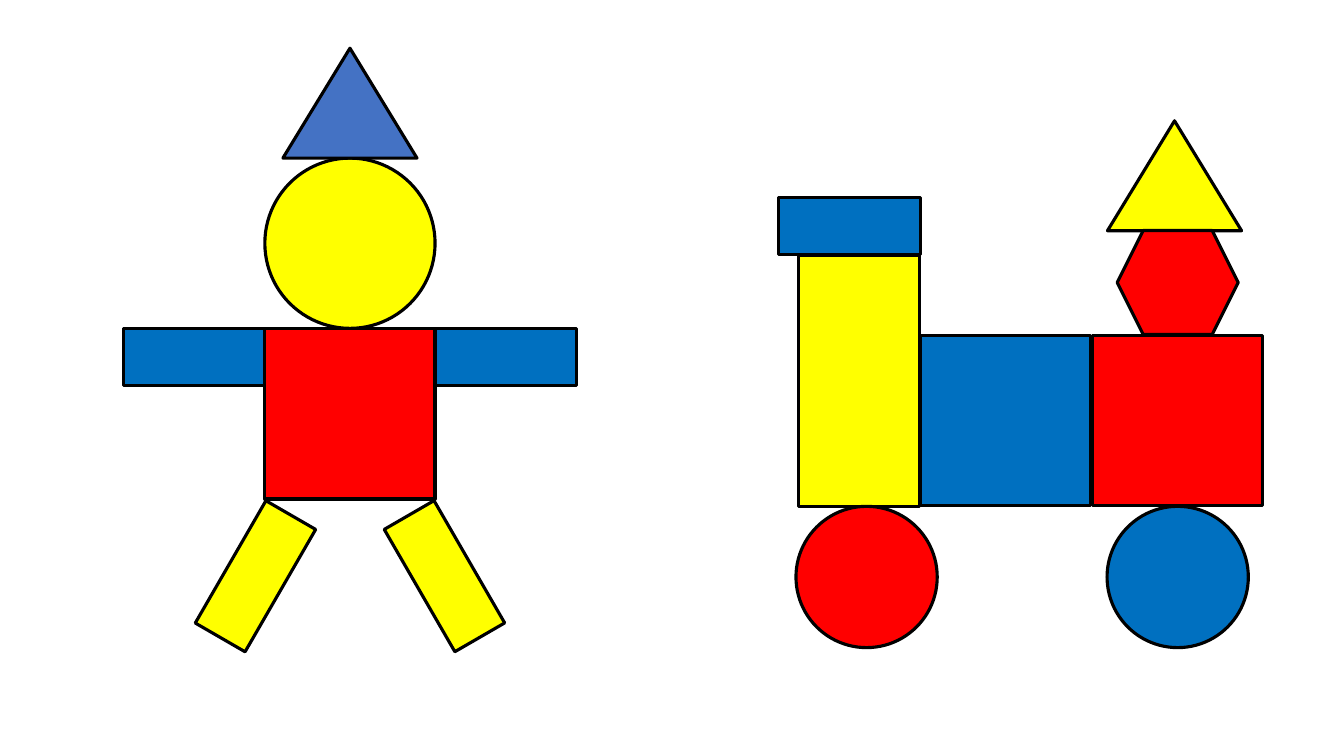
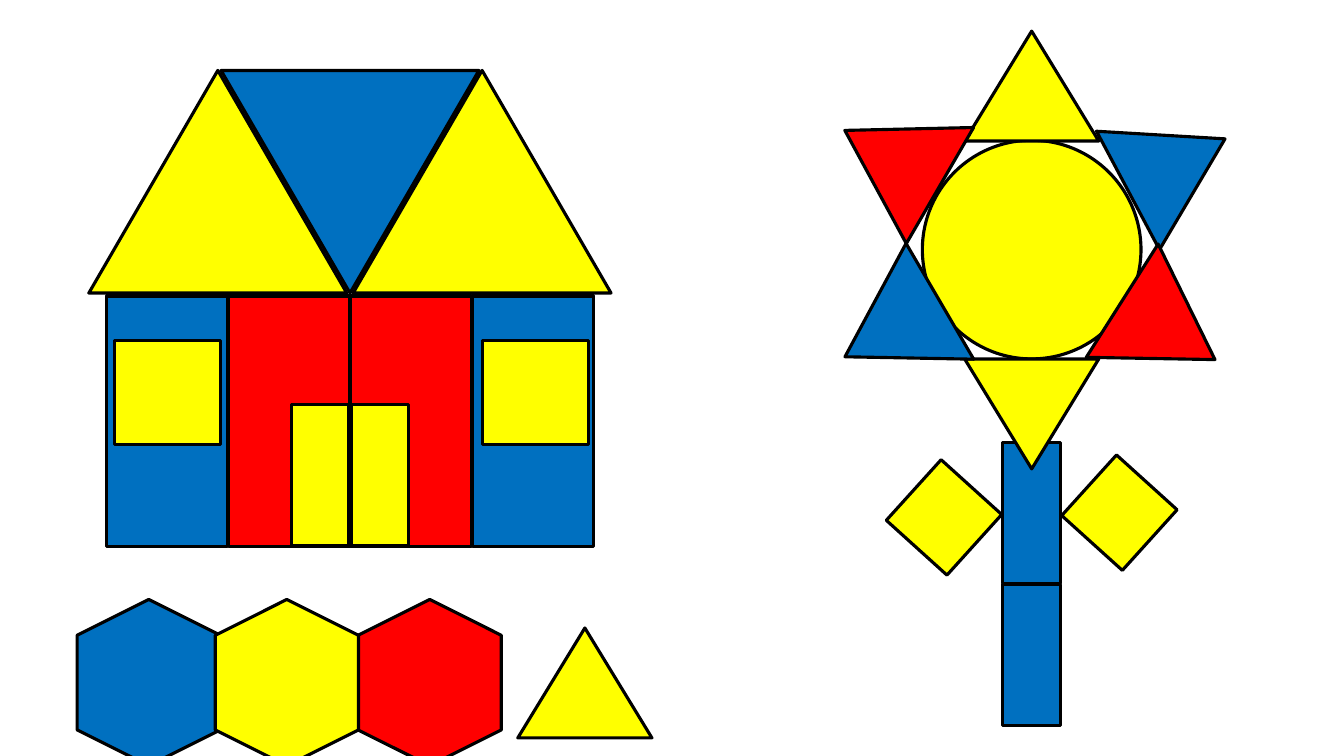
from pptx import Presentation
from pptx.dml.color import RGBColor
from pptx.enum.shapes import MSO_SHAPE as Shape
from pptx.util import Cm, Pt

COLOURS = {
    "red": "FF0000",
    "yellow": "FFFF00",
    "blue": "0070C0",
    "steel": "4472C4",
    "outline": "000000",
}

# Block sizes in cm: width, height
STRIP = (3.56, 1.45)
SLAB = (3.05, 6.32)
SQUARE = (4.29, 4.29)
WHEEL = (3.56, 3.56)
TRIANGLE = (3.38, 2.77)
ROOF = (6.5, 5.61)
WINDOW = (2.67, 2.62)
LEAF = (2.06, 2.06)
DISC = (5.51, 5.51)
SMALL_HEXAGON = (3.05, 2.62)
LARGE_HEXAGON = (4.19, 3.61)


def rgb(name):
    return RGBColor.from_string(COLOURS[name])


def add_block(shapes, kind, colour, centre, size, turn=0):
    """Place an outlined block by its centre, turned clockwise in degrees."""
    (x, y), (width, height) = centre, size
    block = shapes.add_shape(kind, Cm(x - width / 2), Cm(y - height / 2),
                             Cm(width), Cm(height))
    block.rotation = turn
    block.shadow.inherit = False
    block.fill.solid()
    block.fill.fore_color.rgb = rgb(colour)
    block.line.color.rgb = rgb("outline")
    block.line.width = Pt(2.25)


def add_group(slide):
    return slide.shapes.add_group_shape().shapes


def draw_person(slide):
    person = add_group(slide)
    middle = 8.82
    add_block(person, Shape.OVAL, "yellow", (middle, 6.13), SQUARE)
    add_block(person, Shape.ISOSCELES_TRIANGLE, "steel", (middle, 2.6), TRIANGLE)
    add_block(person, Shape.RECTANGLE, "red", (middle, 10.43), SQUARE)
    # Arms and legs mirror each other
    for side in (1, -1):
        add_block(person, Shape.RECTANGLE, "blue", (middle + side * 3.93, 9), STRIP)
        add_block(person, Shape.RECTANGLE, "yellow",
                  (middle + side * 2.38, 14.52), STRIP, side * 60)


def draw_train(slide):
    train = add_group(slide)
    cab = 29.68
    # Engine
    add_block(train, Shape.RECTANGLE, "red", (cab, 10.6), SQUARE)
    add_block(train, Shape.RECTANGLE, "blue", (21.41, 5.7), STRIP)
    add_block(train, Shape.RECTANGLE, "yellow", (21.65, 9.6), SLAB)
    add_block(train, Shape.RECTANGLE, "blue", (25.34, 10.6), SQUARE)
    # Cab roof
    add_block(train, Shape.ISOSCELES_TRIANGLE, "yellow", (29.6, 4.43), TRIANGLE)
    add_block(train, Shape.HEXAGON, "red", (cab, 7.12), SMALL_HEXAGON)
    # Wheels
    for colour, x in (("red", 21.84), ("blue", cab)):
        add_block(train, Shape.OVAL, colour, (x, 14.54), WHEEL)


def draw_house(slide):
    middle = 8.82
    # Roof
    roof = add_group(slide)
    for colour, step, turn in (("yellow", -1, 0), ("yellow", 1, 0), ("blue", 0, 180)):
        add_block(roof, Shape.ISOSCELES_TRIANGLE, colour,
                  (middle + step * 3.33, 4.58), ROOF, turn)
    # Walls
    for i, colour in enumerate(("blue", "red", "red", "blue")):
        add_block(slide.shapes, Shape.RECTANGLE, colour,
                  (middle + (i - 1.5) * 3.07, 10.62), SLAB)
    # Windows and door leaves
    for side in (-1, 1):
        add_block(slide.shapes, Shape.RECTANGLE, "yellow",
                  (middle + 0.04 + side * 4.64, 9.89), WINDOW)
        add_block(slide.shapes, Shape.RECTANGLE, "yellow",
                  (middle + side * 0.75, 11.98), STRIP, 90)


def draw_path(slide):
    paving = add_group(slide)
    for colour, x in (("blue", 3.75), ("red", 10.83), ("yellow", 7.23)):
        add_block(paving, Shape.HEXAGON, colour, (x, 17.2), LARGE_HEXAGON, 270)
    add_block(slide.shapes, Shape.ISOSCELES_TRIANGLE, "yellow", (14.74, 17.21), TRIANGLE)


def draw_flower(slide):
    flower = add_group(slide)
    middle = 26
    # Stem and flower head
    for y in (16.5, 12.92):
        add_block(flower, Shape.RECTANGLE, "blue", (middle, y), STRIP, 270)
    add_block(flower, Shape.OVAL, "yellow", (middle, 6.29), DISC)
    # Petals
    petals = (
        ("yellow", (middle, 2.17), 0),
        ("yellow", (middle, 10.43), 180),
        ("blue", (29.65, 4.15), 62),
        ("blue", (22.49, 8.29), 239.7),
        ("red", (29.45, 8.32), 122.4),
        ("red", (22.49, 3.98), 300.1),
    )
    for colour, centre, turn in petals:
        add_block(flower, Shape.ISOSCELES_TRIANGLE, colour, centre, TRIANGLE, turn)
    # Leaves
    for centre in ((28.21, 12.92), (23.79, 13.04)):
        add_block(flower, Shape.RECTANGLE, "yellow", centre, LEAF, 42.1)


def main():
    deck = Presentation()
    deck.slide_width, deck.slide_height = Cm(33.87), Cm(19.05)
    blank = deck.slide_layouts[6]
    for drawings in ((draw_person, draw_train), (draw_house, draw_path, draw_flower)):
        slide = deck.slides.add_slide(blank)
        for draw in drawings:
            draw(slide)
    deck.save("out.pptx")


if __name__ == "__main__":
    main()
